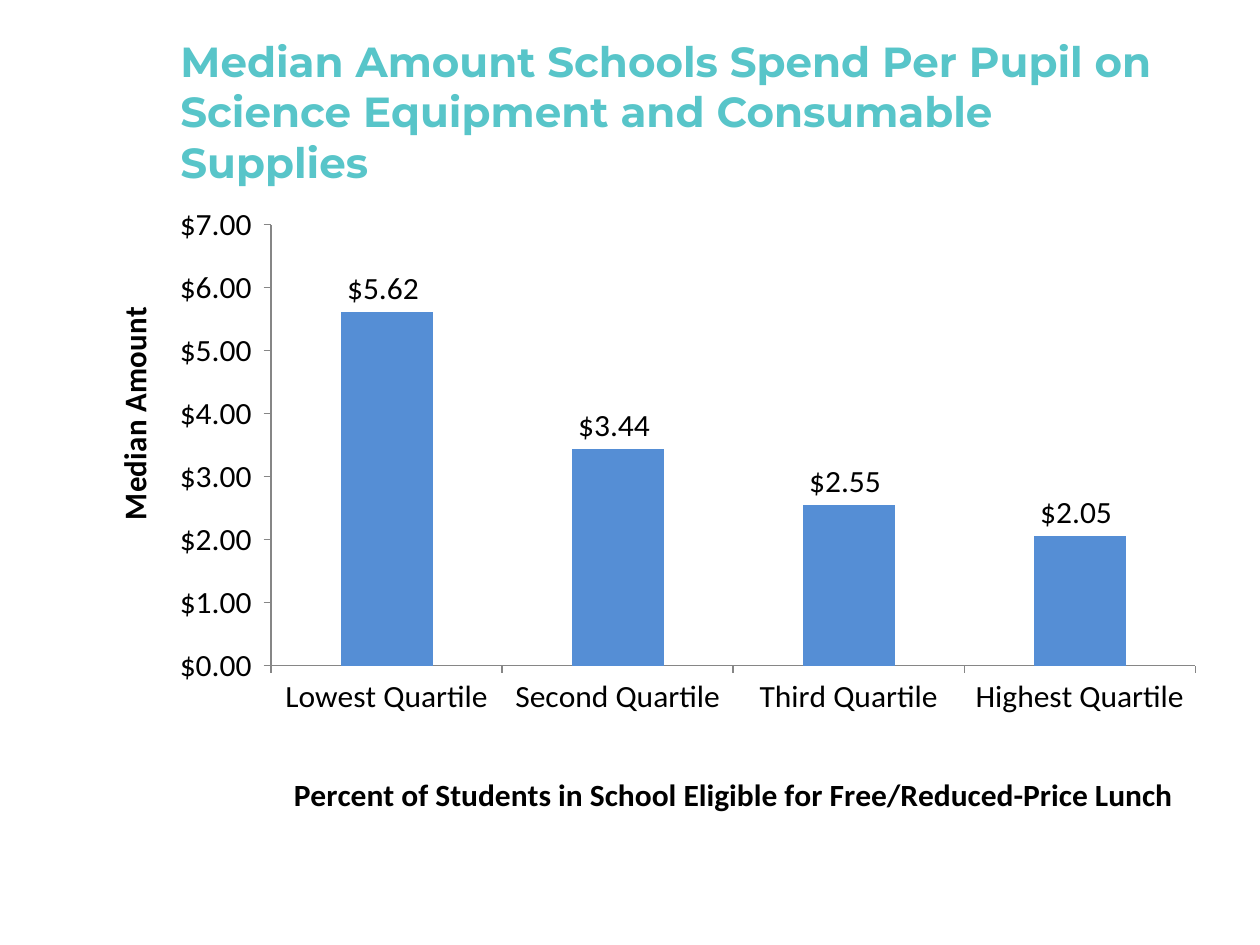
from dataclasses import dataclass

from lxml.etree import SubElement
from pptx import Presentation
from pptx.chart.data import CategoryChartData
from pptx.dml.color import RGBColor as Rgb
from pptx.enum.chart import XL_CHART_TYPE as ChartType
from pptx.enum.chart import XL_LABEL_POSITION as LabelPosition
from pptx.enum.chart import XL_TICK_MARK as TickMark
from pptx.enum.text import MSO_ANCHOR as Anchor
from pptx.oxml.ns import qn
from pptx.util import Pt

EMU_PER_PX = 914400 / 126


@dataclass(frozen=True)
class Theme:
    heading: Rgb = Rgb(0x58, 0xC5, 0xC9)
    bar: Rgb = Rgb(0x55, 0x8E, 0xD5)
    ink: Rgb = Rgb(0, 0, 0)
    axis: Rgb = Rgb(0x86, 0x86, 0x86)
    heading_font: str = "Montserrat"
    chart_font: str = "Calibri"
    heading_size: int = 24
    chart_size: int = 18


THEME = Theme()
DOLLARS = '"$"#,##0.00_);[Red]\\("$"#,##0.00\\)'
SPENDING = {
    "Lowest Quartile": 5.62,
    "Second Quartile": 3.44,
    "Third Quartile": 2.55,
    "Highest Quartile": 2.05,
}


def px(length):
    return round(length * EMU_PER_PX)


def style_font(font, name, size, color, bold=False):
    font.name = name
    font.size = Pt(size)
    font.color.rgb = color
    font.bold = bold


def place(parent, **fractions):
    layout = parent.find(qn("c:layout"))
    if layout is None:
        layout = SubElement(parent, qn("c:layout"))
        parent.insert(0, layout)
    manual = SubElement(layout, qn("c:manualLayout"))
    if "w" in fractions:
        SubElement(manual, qn("c:layoutTarget")).set("val", "inner")
    for mode in ("xMode", "yMode"):
        SubElement(manual, qn(f"c:{mode}")).set("val", "edge")
    for key, fraction in fractions.items():
        SubElement(manual, qn(f"c:{key}")).set("val", str(fraction))


def style_axis(axis, title, x, y, rotation=0):
    axis.has_major_gridlines = False
    axis.major_tick_mark = TickMark.OUTSIDE
    axis.minor_tick_mark = TickMark.NONE
    axis.format.line.color.rgb = THEME.axis
    axis.format.line.width = Pt(0.75)
    style_font(axis.tick_labels.font, THEME.chart_font, THEME.chart_size, THEME.ink)
    axis_title = axis.axis_title
    axis_title.text_frame.text = title
    run = axis_title.text_frame.paragraphs[0].runs[0]
    style_font(run.font, THEME.chart_font, THEME.chart_size, THEME.ink, bold=True)
    for body in axis_title.element.iter(qn("a:bodyPr")):
        body.set("rot", str(rotation * 60000))
        body.set("vert", "horz")
    place(axis_title.element, x=x, y=y)


def add_heading(slide, left, top, width, height):
    heading = slide.shapes.add_textbox(px(left), px(top), px(width), px(height))
    frame = heading.text_frame
    frame.word_wrap = True
    frame.vertical_anchor = Anchor.MIDDLE
    frame.text = "Median Amount Schools Spend Per Pupil on Science Equipment and Consumable Supplies"
    style_font(frame.paragraphs[0].runs[0].font, THEME.heading_font,
               THEME.heading_size, THEME.heading, bold=True)


def add_spending_chart(slide, left, top, width, height):
    spending = CategoryChartData(number_format=DOLLARS)
    spending.categories = list(SPENDING)
    spending.add_series("Series 1", list(SPENDING.values()))
    chart = slide.shapes.add_chart(
        ChartType.COLUMN_CLUSTERED, px(left), px(top), px(width), px(height), spending
    ).chart
    chart.has_legend = False
    chart.has_title = False
    style_font(chart.font, THEME.chart_font, THEME.chart_size, THEME.ink)

    style_axis(chart.category_axis,
               "Percent of Students in School Eligible for Free/Reduced-Price Lunch",
               x=0.18, y=0.93)
    amounts = chart.value_axis
    style_axis(amounts, "Median Amount", x=0.02, y=0.18, rotation=-90)
    amounts.minimum_scale, amounts.maximum_scale, amounts.major_unit = 0, 7, 1
    amounts.tick_labels.number_format = DOLLARS
    amounts.tick_labels.number_format_is_linked = False

    columns = chart.plots[0]
    columns.gap_width = 151
    columns.vary_by_categories = False
    bars = columns.series[0]
    bars.format.fill.solid()
    bars.format.fill.fore_color.rgb = THEME.bar
    labels = bars.data_labels
    labels.show_value = True
    labels.position = LabelPosition.OUTSIDE_END
    labels.number_format = DOLLARS
    labels.number_format_is_linked = False
    style_font(labels.font, THEME.chart_font, THEME.chart_size, THEME.ink)

    plot_area = next(chart.element.iter(qn("c:plotArea")))
    place(plot_area, x=0.165, y=0.05, w=0.815, h=0.714)


def main():
    deck = Presentation()
    deck.slide_width, deck.slide_height = px(1260), px(945)
    slide = deck.slides.add_slide(deck.slide_layouts[6])
    add_spending_chart(slide, 84, 194, 1134, 630)
    add_heading(slide, 168, 32, 1029, 158)
    deck.save("out.pptx")


if __name__ == "__main__":
    main()
